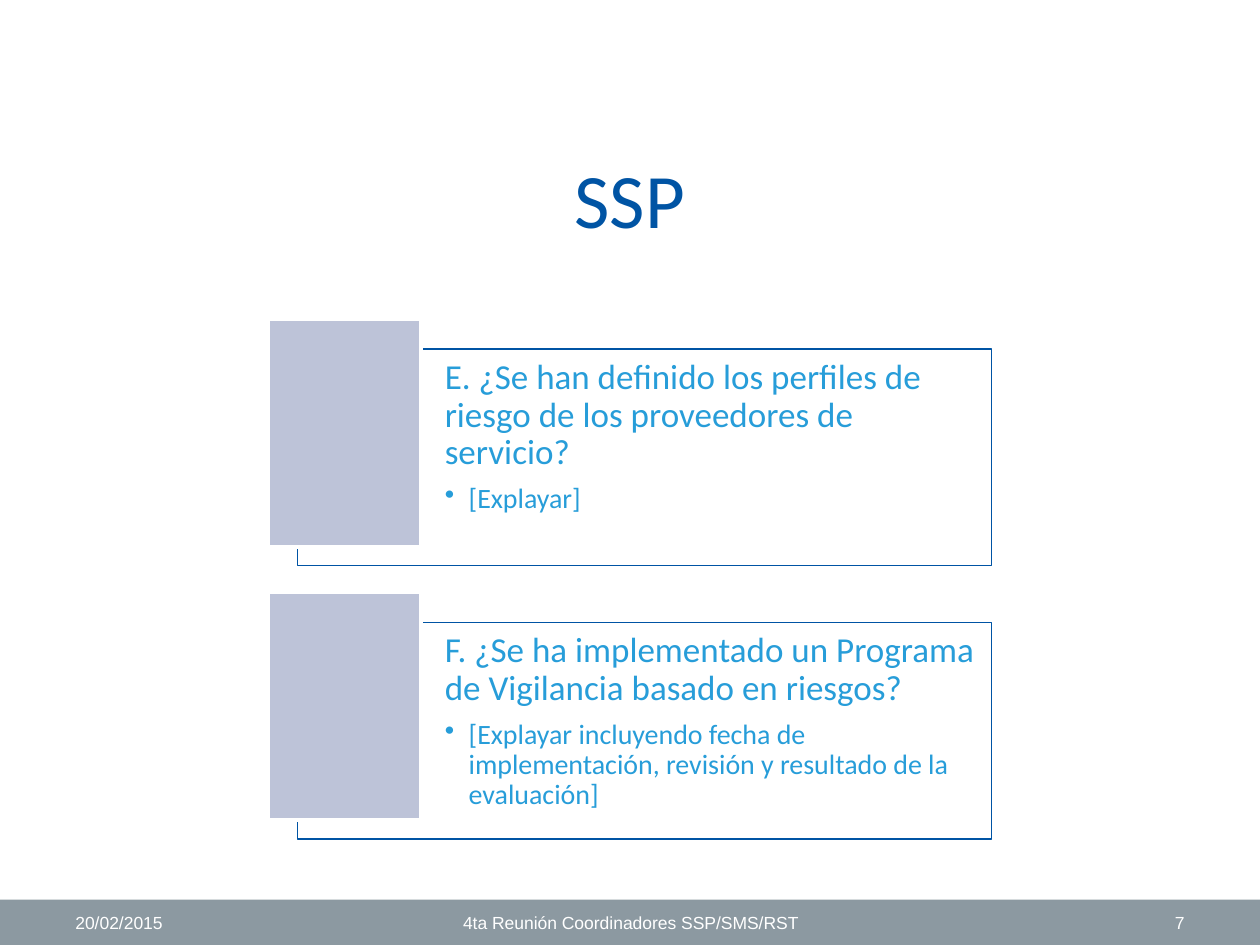
from dataclasses import dataclass

from lxml.etree import SubElement
from pptx import Presentation
from pptx.dml.color import RGBColor
from pptx.enum.shapes import MSO_SHAPE as Shape
from pptx.enum.text import MSO_ANCHOR as Anchor, PP_ALIGN as Align
from pptx.oxml.ns import qn
from pptx.util import Inches, Pt

NAVY, SKY, LAVENDER, SLATE, WHITE = "0054A4", "279DD9", "BDC3D8", "8C99A1", "FFFFFF"
FOOTER_TOP, FOOTER_HEIGHT = 7.14, 0.36


@dataclass
class Question:
    top: float
    heading: str
    detail: str


@dataclass
class Label:
    left: float
    top: float
    width: float
    height: float
    text: str
    size: int
    font: str
    color: str
    align: Align
    anchor: Anchor


QUESTIONS = [
    Question(2.77, "E. ¿Se han definido los perfiles de riesgo de los proveedores de servicio?",
             "[Explayar]"),
    Question(4.94, "F. ¿Se ha implementado un Programa de Vigilancia basado en riesgos?",
             "[Explayar incluyendo fecha de implementación, revisión y resultado de la evaluación]"),
]


def footer_label(left: float, width: float, text: str, align: Align) -> Label:
    return Label(left, FOOTER_TOP, width, FOOTER_HEIGHT, text, 10, "Arial", WHITE,
                 align, Anchor.MIDDLE)


LABELS = [
    Label(0.5, 1.15, 9, 1.25, "SSP", 44, "Calibri", NAVY, Align.CENTER, Anchor.TOP),
    footer_label(0.5, 2.33, "20/02/2015", Align.LEFT),
    footer_label(3.42, 3.17, "4ta Reunión Coordinadores SSP/SMS/RST", Align.CENTER),
    footer_label(7.17, 2.33, "7", Align.RIGHT),
]


def rgb(color: str) -> RGBColor:
    return RGBColor.from_string(color)


def add_span(para, text: str, size: int, font: str, color: str) -> None:
    span = para.add_run()
    span.text = text
    span.font.size = Pt(size)
    span.font.name = font
    span.font.color.rgb = rgb(color)


def add_box(page, left: float, top: float, width: float, height: float, fill: str,
            line: str = "", weight: float = 0):
    box = page.shapes.add_shape(Shape.RECTANGLE, Inches(left), Inches(top),
                                Inches(width), Inches(height))
    box.shadow.inherit = False
    box.fill.solid()
    box.fill.fore_color.rgb = rgb(fill)
    if line:
        box.line.color.rgb = rgb(line)
        box.line.width = Pt(weight)
    else:
        box.line.fill.background()
    return box


def set_opacity(box, percent: int) -> None:
    color = box.fill._xPr.find(qn("a:solidFill"))[0]
    SubElement(color, qn("a:alpha"), val=str(percent * 1000))


def add_bullet(para) -> None:
    properties = para._p.get_or_add_pPr()
    properties.set("marL", str(Inches(0.19)))
    properties.set("indent", str(Inches(-0.19)))
    SubElement(properties, qn("a:buChar"), char="•")


def add_label(page, label: Label) -> None:
    box = page.shapes.add_textbox(Inches(label.left), Inches(label.top),
                                  Inches(label.width), Inches(label.height))
    frame = box.text_frame
    frame.word_wrap = True
    frame.vertical_anchor = label.anchor
    para = frame.paragraphs[0]
    para.alignment = label.align
    add_span(para, label.text, label.size, label.font, label.color)


def add_question(page, question: Question) -> None:
    panel = add_box(page, 2.36, question.top, 5.51, 1.72, WHITE, NAVY, 0.75)
    set_opacity(panel, 40)
    frame = panel.text_frame
    frame.word_wrap = True
    frame.vertical_anchor = Anchor.TOP
    frame.margin_left = Inches(1.17)
    frame.margin_top = frame.margin_right = frame.margin_bottom = Inches(0.08)
    heading, detail = frame.paragraphs[0], frame.add_paragraph()
    add_bullet(detail)
    detail.level = 1
    for para, text, size, gap in ((heading, question.heading, 20, 7),
                                  (detail, question.detail, 16, 2.4)):
        para.alignment = Align.LEFT
        para.line_spacing = 0.9
        para.space_after = Pt(gap)
        add_span(para, text, size, "Calibri", SKY)
    add_box(page, 2.13, question.top - 0.24, 1.21, 1.81, LAVENDER, WHITE, 2)


def main() -> None:
    deck = Presentation()
    deck.slide_width, deck.slide_height = Inches(10), Inches(7.5)
    page = deck.slides.add_slide(deck.slide_layouts[6])
    add_box(page, 0, FOOTER_TOP, 10, FOOTER_HEIGHT, SLATE)
    for question in QUESTIONS:
        add_question(page, question)
    for label in LABELS:
        add_label(page, label)
    deck.save("out.pptx")


if __name__ == "__main__":
    main()
